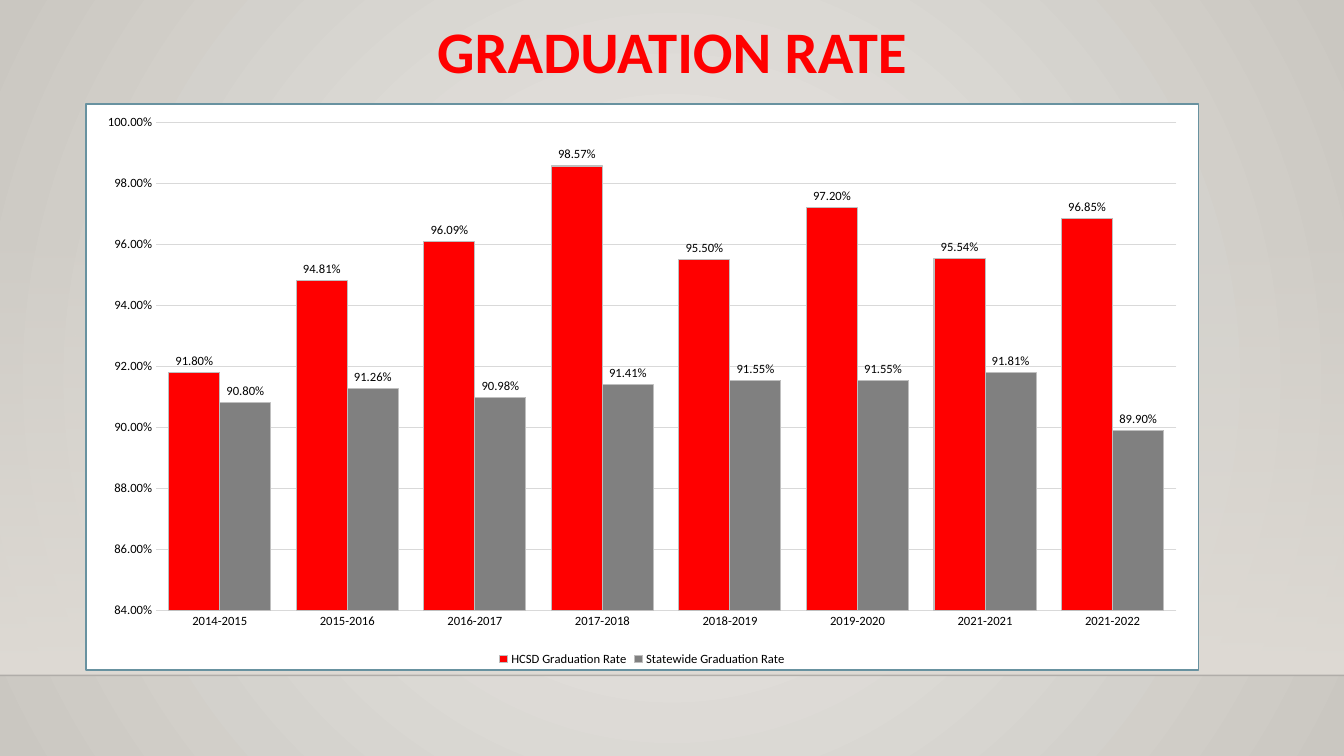
from lxml.etree import SubElement
from pptx import Presentation
from pptx.chart.data import CategoryChartData
from pptx.dml.color import RGBColor
from pptx.enum.chart import XL_CHART_TYPE, XL_LABEL_POSITION, XL_LEGEND_POSITION, XL_TICK_MARK
from pptx.enum.shapes import MSO_CONNECTOR, MSO_SHAPE
from pptx.enum.text import MSO_ANCHOR, PP_ALIGN
from pptx.oxml import parse_xml
from pptx.oxml.ns import nsdecls, qn
from pptx.util import Inches, Pt

COLORS = {
    "glow": "ECEAE7", "edge": "CAC7C1", "wall": "DFDBD5", "floor": "000001",
    "title": "FF0000", "text": "000000", "grid": "D9D9D9", "paper": "FFFFFF",
    "frame": "6892A0", "bar_line": "BFBFBF", "district": "FF0000", "state": "808080",
}
YEARS = ["2014-2015", "2015-2016", "2016-2017", "2017-2018",
         "2018-2019", "2019-2020", "2021-2021", "2021-2022"]
RATES = {
    "HCSD Graduation Rate": (
        "district", [0.918, 0.9481, 0.9609, 0.9857, 0.955, 0.972, 0.9554, 0.9685]),
    "Statewide Graduation Rate": (
        "state", [0.908, 0.9126, 0.9098, 0.9141, 0.9155, 0.9155, 0.9181, 0.899]),
}
PERCENT = "0.00%"


class RateSlide:
    """Hold the deck, its style and a slide grid of 160 columns by 90 rows."""

    def __init__(self, font="Calibri"):
        self.deck = Presentation()
        self.deck.slide_width, self.deck.slide_height = Inches(13.333), Inches(7.5)
        self.slide = self.deck.slides.add_slide(self.deck.slide_layouts[6])
        self.shapes = self.slide.shapes
        self.font = font

    def box(self, column, row, columns, rows):
        cell_width, cell_height = self.deck.slide_width / 160, self.deck.slide_height / 90
        return [int(column * cell_width), int(row * cell_height),
                int(columns * cell_width), int(rows * cell_height)]

    def color(self, name):
        return RGBColor.from_string(COLORS[name])

    def style_font(self, font, size, name="text", bold=False):
        font.name, font.size, font.bold = self.font, Pt(size), bold
        font.color.rgb = self.color(name)

    def style_line(self, line, name, width=0.75):
        line.color.rgb, line.width = self.color(name), Pt(width)

    def fade(self, color_element, percent):
        SubElement(color_element, qn("a:alpha"), val=str(percent * 1000))

    def gradient(self, fill, *names):
        fill.gradient()
        for stop, name in zip(fill.gradient_stops, names):
            stop.color.rgb = self.color(name)

    def backdrop(self):
        self.gradient(self.slide.background.fill, "glow", "edge")
        linear = self.slide.element.find(".//" + qn("a:lin"))
        linear.getparent().replace(linear, parse_xml(
            f'<a:path {nsdecls("a")} path="circle">'
            '<a:fillToRect l="50000" t="50000" r="50000" b="50000"/></a:path>'))

    def wall(self, *place):
        wall = self.shapes.add_shape(MSO_SHAPE.RECTANGLE, *self.box(*place))
        wall.shadow.inherit = False
        wall.line.fill.background()
        self.gradient(wall.fill, "wall", "wall")
        wall.fill.gradient_angle = 270
        self.fade(wall.element.find(".//" + qn("a:srgbClr")), 0)

    def floor_line(self, row):
        left, top, width, _ = self.box(0, row, 160, 0)
        floor = self.shapes.add_connector(MSO_CONNECTOR.STRAIGHT, left, top, left + width, top)
        self.style_line(floor.line, "floor", 1)
        self.fade(floor.element.find(".//" + qn("a:srgbClr")), 20)
        SubElement(floor.element.spPr, qn("a:effectLst"))

    def title(self, wording, *place):
        frame = self.shapes.add_textbox(*self.box(*place)).text_frame
        frame.word_wrap, frame.vertical_anchor = True, MSO_ANCHOR.MIDDLE
        frame.text = wording
        heading = frame.paragraphs[0]
        heading.alignment, heading.line_spacing = PP_ALIGN.CENTER, 0.9
        self.style_font(heading.runs[0].font, 42, "title", True)

    def rate_chart(self, *place):
        data = CategoryChartData(number_format=PERCENT)
        data.categories = YEARS
        for name, (_, rates) in RATES.items():
            data.add_series(name, rates)
        chart = self.shapes.add_chart(
            XL_CHART_TYPE.COLUMN_CLUSTERED, *self.box(*place), data).chart
        self.style_font(chart.font, 10)
        self.chart_area(chart)
        chart.has_title = False
        chart.has_legend = True
        chart.legend.position = XL_LEGEND_POSITION.BOTTOM
        chart.legend.include_in_layout = False
        self.style_font(chart.legend.font, 9)
        self.axes(chart.category_axis, chart.value_axis)
        self.bars(chart.plots[0])

    def chart_area(self, chart):
        text_style = chart.element.find(qn("c:txPr"))
        text_style.addprevious(parse_xml(
            f'<c:spPr {nsdecls("c", "a")}>'
            f'<a:solidFill><a:srgbClr val="{COLORS["paper"]}"/></a:solidFill>'
            f'<a:ln w="{Pt(1.25)}"><a:solidFill><a:srgbClr val="{COLORS["frame"]}"/>'
            '</a:solidFill></a:ln></c:spPr>'))

    def axes(self, years, rates):
        for axis in (years, rates):
            axis.major_tick_mark = axis.minor_tick_mark = XL_TICK_MARK.NONE
            self.style_font(axis.tick_labels.font, 9)
        self.style_line(years.format.line, "grid")
        rates.format.line.fill.background()
        rates.minimum_scale, rates.maximum_scale, rates.major_unit = 0.84, 1, 0.02
        rates.tick_labels.number_format = PERCENT
        rates.tick_labels.number_format_is_linked = False
        self.style_line(rates.major_gridlines.format.line, "grid")

    def bars(self, plot):
        plot.gap_width, plot.overlap, plot.vary_by_categories = 50, 0, False
        for series, (name, _) in zip(plot.series, RATES.values()):
            series.format.fill.solid()
            series.format.fill.fore_color.rgb = self.color(name)
            self.style_line(series.format.line, "bar_line")
            labels = series.data_labels
            labels.show_value, labels.position = True, XL_LABEL_POSITION.OUTSIDE_END
            labels.number_format, labels.number_format_is_linked = PERCENT, False
            self.style_font(labels.font, 9)


def main():
    page = RateSlide()
    page.backdrop()
    page.wall(0, 26.5, 160, 53.9)
    page.floor_line(80.4)
    page.title("GRADUATION RATE", 11, 2.75, 138, 7.5)
    page.rate_chart(10.1, 12.25, 132.7, 67.65)
    page.deck.save("out.pptx")


if __name__ == "__main__":
    main()
